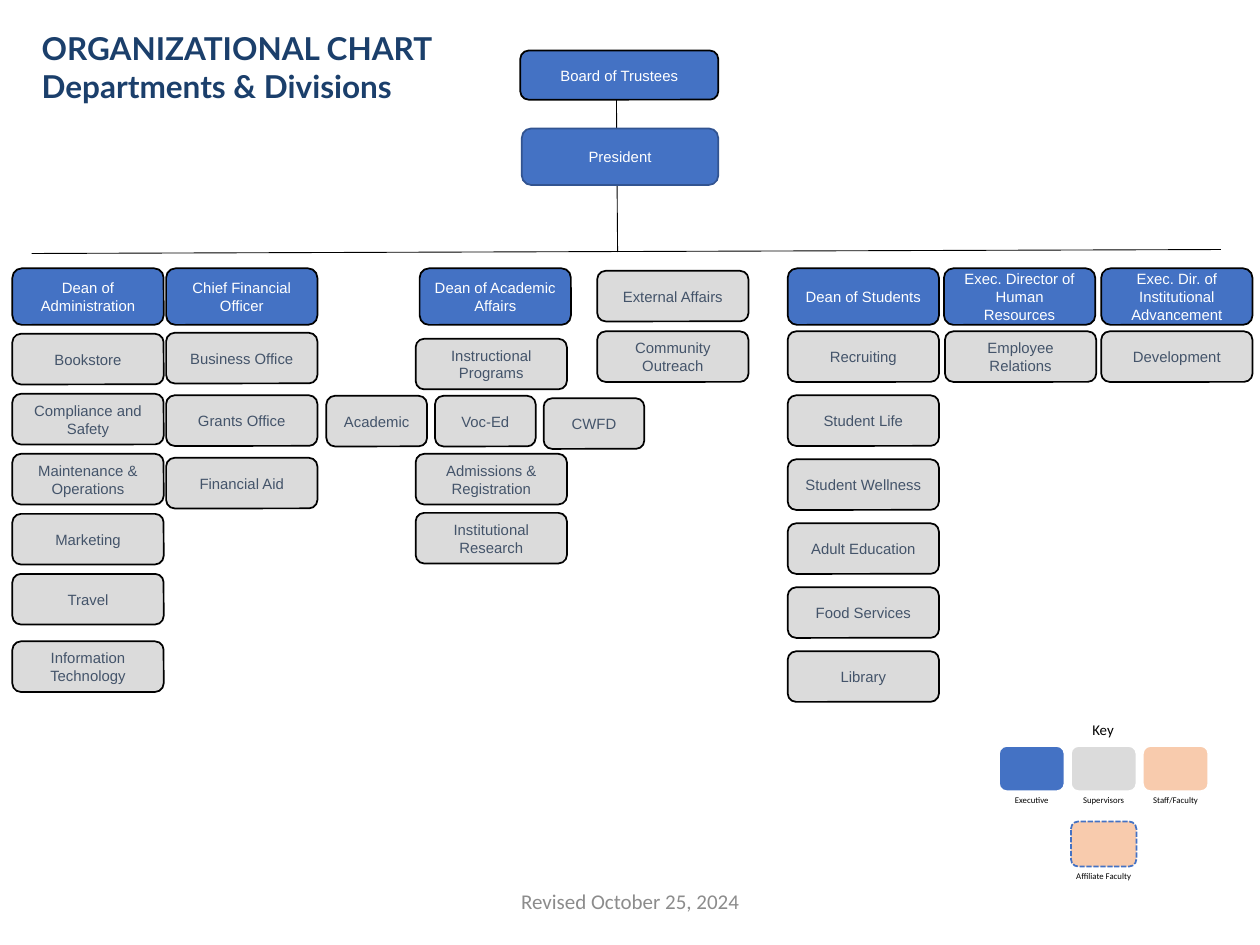
import lxml.etree
import pptx
import pptx.dml.color
import pptx.enum.dml
import pptx.enum.shapes
import pptx.enum.text
import pptx.oxml.ns
import pptx.util

Cm, Pt = pptx.util.Cm, pptx.util.Pt
RGB = pptx.dml.color.RGBColor.from_string
ALIGN = pptx.enum.text.PP_ALIGN
ANCHOR = pptx.enum.text.MSO_ANCHOR
AUTO_SIZE = pptx.enum.text.MSO_AUTO_SIZE
ROUNDED = pptx.enum.shapes.MSO_SHAPE.ROUNDED_RECTANGLE

# Theme: colours, then text styles as (font format, colour)
THEME = {
    "executive": "4472C4",
    "president_edge": "325491",
    "supervisor": "DBDBDB",
    "faculty": "F8CBAD",
    "black": "000000",
    "white": "FFFFFF",
    "title": ({"name": "Lato", "size": Pt(18), "bold": True}, "1B3F6B"),
    "executive_text": ({"name": "Arial", "size": Pt(8.5)}, "FFFFFF"),
    "supervisor_text": ({"name": "Arial", "size": Pt(8.5)}, "44546A"),
    "revision": ({"name": "Calibri", "size": Pt(12)}, "8C8C8C"),
    "key_title": ({"name": "Calibri", "size": Pt(8.5)}, "000000"),
    "key_label": ({"name": "Calibri", "size": Pt(5)}, "000000"),
}
CENTRED = {"alignment": ALIGN.CENTER}
MIDDLE = {"word_wrap": True, "vertical_anchor": ANCHOR.MIDDLE}


def write(shape, lines, style, frame_format, paragraph_format):
    frame = shape.text_frame
    for attribute, value in frame_format.items():
        setattr(frame, attribute, value)
    font_format, colour = THEME[style]
    for index, line in enumerate(lines):
        paragraph = frame.add_paragraph() if index else frame.paragraphs[0]
        for attribute, value in paragraph_format.items():
            setattr(paragraph, attribute, value)
        run = paragraph.add_run()
        run.text = line
        for attribute, value in font_format.items():
            setattr(run.font, attribute, value)
        run.font.color.rgb = RGB(colour)


def add_box(left, top, width, height, role, edge="black", label=None):
    box = slide.shapes.add_shape(ROUNDED, Cm(left), Cm(top), Cm(width), Cm(height))
    box.shadow.inherit = False
    box.fill.solid()
    box.fill.fore_color.rgb = RGB(THEME[role])
    box.line.color.rgb = RGB(THEME[edge])
    box.line.width = Pt(1)
    if label:
        write(box, [label], role + "_text", MIDDLE, CENTRED)
    return box


deck = pptx.Presentation()
deck.slide_width, deck.slide_height = Cm(25.4), Cm(19.05)
slide = deck.slides.add_slide(deck.slide_layouts[5])

# Title
title = slide.shapes.title
title_place = {"left": Cm(0.74), "top": Cm(0.48), "width": Cm(8.46), "height": Cm(1.09)}
for attribute, value in title_place.items():
    setattr(title, attribute, value)
title_frame = {"word_wrap": True, "vertical_anchor": ANCHOR.TOP, "auto_size": AUTO_SIZE.NONE}
for side in ("left", "right", "top", "bottom"):
    title_frame["margin_" + side] = Cm(0.1)
write(title, ["ORGANIZATIONAL CHART", "Departments & Divisions"], "title",
      title_frame, {"alignment": ALIGN.LEFT})

# Reporting lines: the trunk and the crossbar
for ends in [(12.42, 1.09, 12.45, 5.08), (0.64, 5.11, 24.61, 5.03)]:
    reporting_line = slide.shapes.add_connector(
        pptx.enum.shapes.MSO_CONNECTOR.STRAIGHT, *map(Cm, ends))
    reporting_line.line.color.rgb = RGB(THEME["black"])
    reporting_line.line.width = Pt(0.5)
    lxml.etree.SubElement(reporting_line.element.spPr, pptx.oxml.ns.qn("a:effectLst"))

# Top of the hierarchy
add_box(10.49, 1.02, 3.99, 0.99, "executive", label="Board of Trustees")
add_box(10.52, 2.59, 3.96, 1.14, "executive", "president_edge", "President")

# Division heads
BOX_WIDTH, HEAD_HEIGHT, BOX_HEIGHT = 3.05, 1.14, 1.02
division_heads = [
    (0.25, "Dean of Administration"),
    (3.35, "Chief Financial Officer"),
    (8.46, "Dean of Academic Affairs"),
    (15.88, "Dean of Students"),
    (19.03, "Exec. Director of Human Resources"),
    (22.2, "Exec. Dir. of Institutional Advancement"),
]
for left, head in division_heads:
    add_box(left, 5.41, BOX_WIDTH, HEAD_HEIGHT, "executive", label=head)

# Departments: left, first top, step down, names
department_columns = [
    (0.25, 6.73, 1.21, ["Bookstore", "Compliance and Safety", "Maintenance & Operations",
                        "Marketing", "Travel"]),
    (0.25, 12.93, 0, ["Information Technology"]),
    (3.35, 6.71, 1.26, ["Business Office", "Grants Office", "Financial Aid"]),
    (8.38, 6.83, 0, ["Instructional Programs"]),
    (8.38, 9.15, 1.19, ["Admissions & Registration", "Institutional Research"]),
    (12.04, 5.46, 1.22, ["External Affairs", "Community Outreach"]),
    (15.88, 6.68, 1.29, ["Recruiting", "Student Life", "Student Wellness",
                         "Adult Education", "Food Services", "Library"]),
    (19.05, 6.68, 0, ["Employee Relations"]),
    (22.2, 6.68, 0, ["Development"]),
]
for left, first_top, step, departments in department_columns:
    for row, department in enumerate(departments):
        add_box(left, first_top + row * step, BOX_WIDTH, BOX_HEIGHT,
                "supervisor", label=department)

# Instructional programs, side by side
for column, (program, top) in enumerate([("Academic", 7.98), ("Voc-Ed", 7.98), ("CWFD", 8.03)]):
    add_box(6.58 + column * 2.19, top, 2.03, BOX_HEIGHT, "supervisor", label=program)

# Revision date
revision = slide.shapes.add_textbox(Cm(8.41), Cm(17.65), Cm(8.59), Cm(1.02))
write(revision, ["Revised October 25, 2024"], "revision", MIDDLE, CENTRED)

# Key: swatch left and top, label width, colour, edge, label
SWATCH_WIDTH, SWATCH_HEIGHT = 1.32, 0.91
key_entries = [
    (20.14, 15.04, 1.32, "executive", "white", "Executive"),
    (21.59, 15.04, 1.32, "supervisor", "white", "Supervisors"),
    (23.04, 15.04, 1.32, "faculty", "white", "Staff/Faculty"),
    (21.59, 16.56, 2.18, "faculty", "executive", "Affiliate Faculty"),
]
label_frame = {"word_wrap": True, "margin_left": Cm(0.1), "margin_right": Cm(0.1),
               "margin_top": Cm(0.1), "margin_bottom": 0}
label_paragraph = {**CENTRED, "line_spacing": 0.9, "space_after": Pt(1.75)}
for left, top, label_width, role, edge, meaning in key_entries:
    swatch = add_box(left, top, SWATCH_WIDTH, SWATCH_HEIGHT, role, edge)
    if edge != "white":
        swatch.line.dash_style = pptx.enum.dml.MSO_LINE.SQUARE_DOT
    label_left = left + (SWATCH_WIDTH - label_width) / 2
    key_label = slide.shapes.add_textbox(
        Cm(label_left), Cm(top + SWATCH_HEIGHT), Cm(label_width), Cm(0.48))
    write(key_label, [meaning], "key_label", label_frame, label_paragraph)

key_title = slide.shapes.add_textbox(Cm(21.77), Cm(14.4), Cm(0.97), Cm(0.61))
write(key_title, ["Key"], "key_title",
      {"word_wrap": False, "auto_size": AUTO_SIZE.SHAPE_TO_FIT_TEXT}, {"alignment": ALIGN.LEFT})

deck.save("out.pptx")
